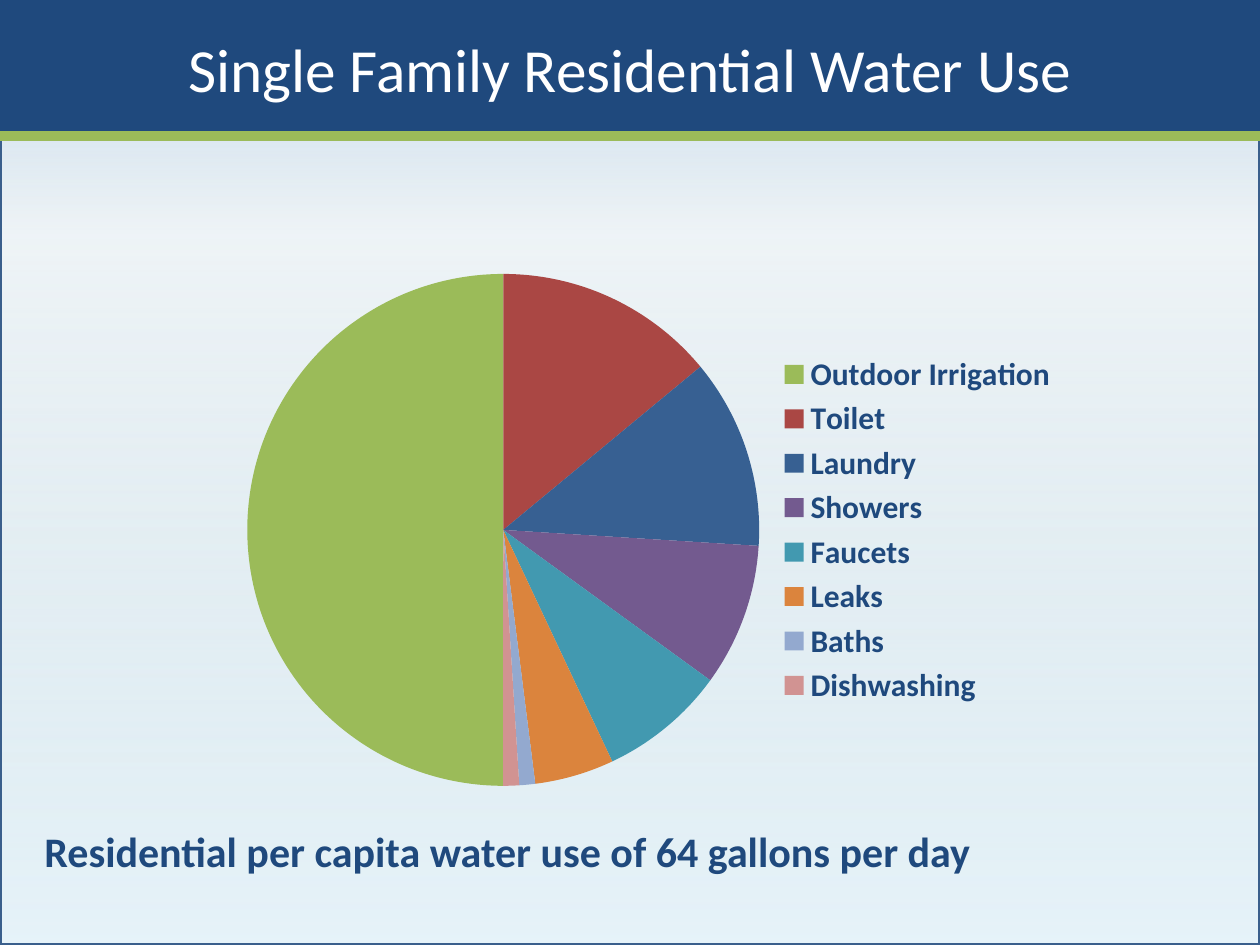
from lxml import etree
from pptx import Presentation
from pptx.chart.data import CategoryChartData
from pptx.dml.color import RGBColor
from pptx.enum.chart import XL_CHART_TYPE as ChartType, XL_LEGEND_POSITION as LegendSide
from pptx.enum.shapes import MSO_CONNECTOR as Connector, MSO_SHAPE as Shape
from pptx.enum.text import MSO_ANCHOR as Anchor, MSO_AUTO_SIZE as AutoSize, PP_ALIGN as Align
from pptx.oxml import parse_xml
from pptx.oxml.ns import nsdecls, qn
from pptx.util import Pt

TITLE = "Single Family Residential Water Use"
SUMMARY = "Residential per capita water use of 64 gallons per day"
WATER_USES = [
    ("Outdoor Irrigation", 50, "9BBB59"),
    ("Toilet", 14, "AA4744"),
    ("Laundry", 12, "376092"),
    ("Showers", 9, "735A8F"),
    ("Faucets", 8, "4299B0"),
    ("Leaks", 5, "DB843D"),
    ("Baths", 1, "93A9CF"),
    ("Dishwashing", 1, "D19392"),
]
BACKDROP_STOPS = [(0, "C6D9F1", 100), (25, "C1D6E0", 26), (100, "E6F3F9", 100)]
PIE_LAYOUT = {"x": 0.02, "y": 0.1, "w": 0.61, "h": 0.8}
NAVY, GREEN, WHITE, EDGE = "1F497D", "9BBB59", "FFFFFF", "3A5F8C"
FONT = "Calibri"
WIDTH, HEIGHT, BANNER = 1260, 945, 136
SCALE = 914400 // 126


def px(*lengths):
    return [length * SCALE for length in lengths]


def color(value):
    return RGBColor.from_string(value)


def style(font, size, value, bold=False):
    font.name, font.size, font.bold = FONT, Pt(size), bold
    font.color.rgb = color(value)


def write(frame, text, size, value, bold=False, align=Align.LEFT):
    paragraph = frame.paragraphs[0]
    paragraph.alignment = align
    run = paragraph.add_run()
    run.text = text
    style(run.font, size, value, bold)


def add_backdrop(slide):
    backdrop = slide.shapes.add_shape(Shape.RECTANGLE, *px(0, 0, WIDTH, HEIGHT))
    backdrop.shadow.inherit = False
    backdrop.line.color.rgb = color(EDGE)
    backdrop.line.width = Pt(2)
    backdrop.fill.gradient()
    backdrop.fill.gradient_angle = 270
    stops = backdrop.element.spPr.find(qn("a:gradFill")).find(qn("a:gsLst"))
    for stop in list(stops):
        stops.remove(stop)
    for position, value, alpha in BACKDROP_STOPS:
        stops.append(parse_xml(
            f'<a:gs {nsdecls("a")} pos="{position * 1000}"><a:srgbClr val="{value}">'
            f'<a:alpha val="{alpha * 1000}"/></a:srgbClr></a:gs>'))
    slide.shapes.element.insert(2, backdrop.element)


def add_banner(slide):
    title = slide.shapes.title
    title.left, title.top, title.width, title.height = px(0, 0, WIDTH, BANNER)
    title.fill.solid()
    title.fill.fore_color.rgb = color(NAVY)
    title.text_frame.vertical_anchor = Anchor.MIDDLE
    write(title.text_frame, TITLE, 35, WHITE, align=Align.CENTER)
    rule = slide.shapes.add_connector(Connector.STRAIGHT, *px(0, BANNER, WIDTH, BANNER))
    rule.line.color.rgb = color(GREEN)
    rule.line.width = Pt(6)
    etree.SubElement(rule.element.spPr, qn("a:effectLst"))


def add_pie(slide):
    data = CategoryChartData()
    data.categories = [use for use, _, _ in WATER_USES]
    data.add_series("Series 1", [share for _, share, _ in WATER_USES])
    chart = slide.shapes.add_chart(ChartType.PIE, *px(230, 210, 841, 640), data).chart
    chart.has_title = False
    style(chart.font, 18, NAVY)
    chart.has_legend = True
    chart.legend.position = LegendSide.RIGHT
    chart.legend.include_in_layout = False
    style(chart.legend.font, 18, NAVY, bold=True)
    plot = chart.plots[0]
    plot.vary_by_categories = True
    for index, (_, _, value) in enumerate(WATER_USES):
        fill = plot.series[0].points[index].format.fill
        fill.solid()
        fill.fore_color.rgb = color(value)

    pie = chart.element.find(".//" + qn("c:pieChart"))
    angle = pie.find(qn("c:firstSliceAng"))
    if angle is None:
        angle = etree.SubElement(pie, qn("c:firstSliceAng"))
    angle.set("val", "180")
    area = pie.getparent()
    for old in area.findall(qn("c:layout")):
        area.remove(old)
    layout = etree.Element(qn("c:layout"))
    manual = etree.SubElement(layout, qn("c:manualLayout"))
    settings = {"layoutTarget": "inner", "xMode": "edge", "yMode": "edge", **PIE_LAYOUT}
    for tag, value in settings.items():
        etree.SubElement(manual, qn(f"c:{tag}")).set("val", str(value))
    area.insert(0, layout)


def add_summary(slide):
    frame = slide.shapes.add_textbox(*px(32, 819, 1041, 63)).text_frame
    frame.word_wrap = True
    frame.auto_size = AutoSize.SHAPE_TO_FIT_TEXT
    write(frame, SUMMARY, 24, NAVY, bold=True)


def main():
    deck = Presentation()
    deck.slide_width, deck.slide_height = px(WIDTH, HEIGHT)
    slide = deck.slides.add_slide(deck.slide_layouts[5])
    for add_part in (add_backdrop, add_banner, add_pie, add_summary):
        add_part(slide)
    deck.save("out.pptx")


if __name__ == "__main__":
    main()
